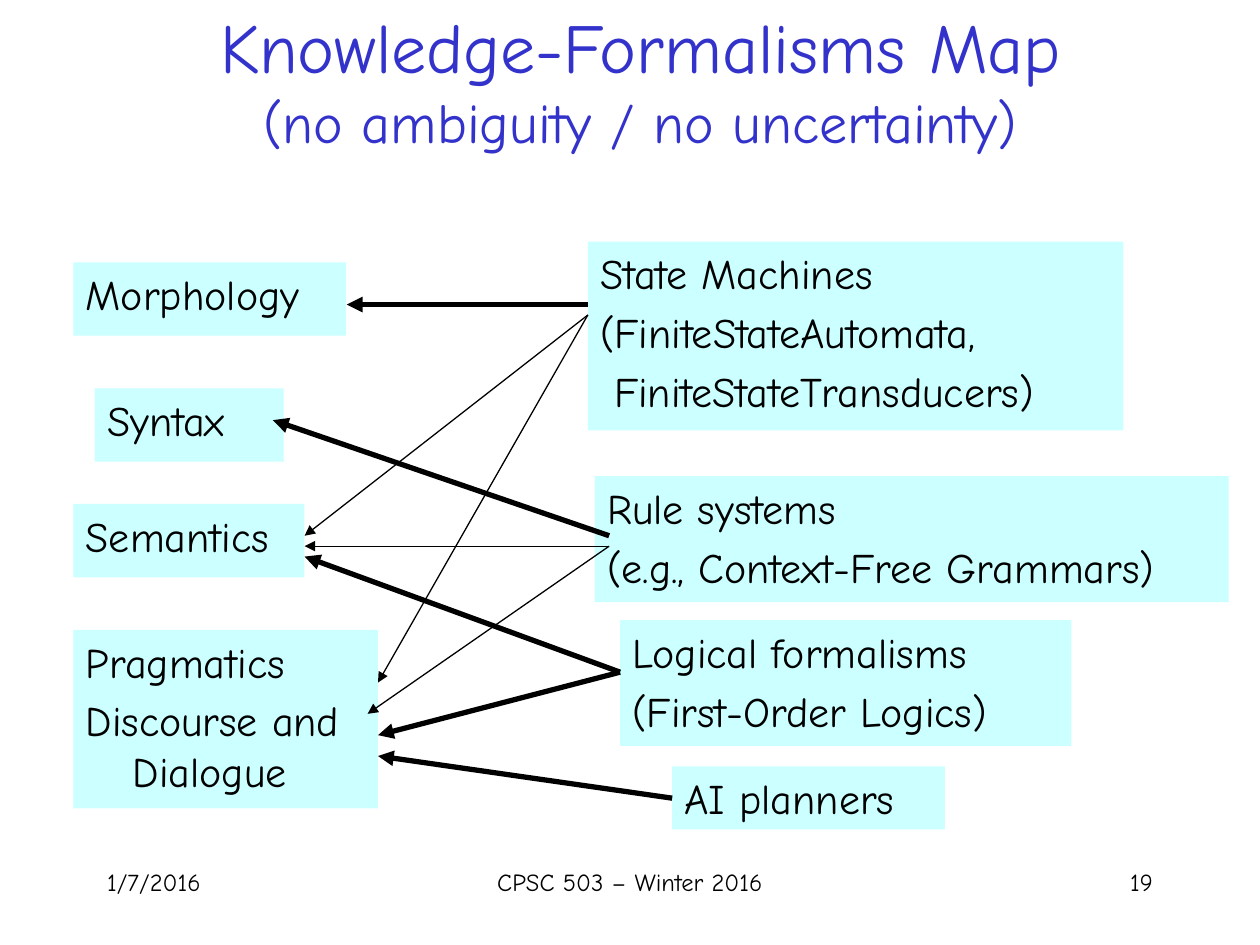
from lxml import etree
from pptx import Presentation
from pptx.dml.color import RGBColor
from pptx.enum.shapes import MSO_CONNECTOR, MSO_SHAPE
from pptx.enum.text import MSO_ANCHOR, PP_ALIGN
from pptx.oxml.ns import qn
from pptx.util import Cm, Pt

LEFT, CENTER, RIGHT = PP_ALIGN.LEFT, PP_ALIGN.CENTER, PP_ALIGN.RIGHT
TOP, MIDDLE = MSO_ANCHOR.TOP, MSO_ANCHOR.MIDDLE
RECTANGLE, STRAIGHT = MSO_SHAPE.RECTANGLE, MSO_CONNECTOR.STRAIGHT

BLACK, BLUE, CYAN = "000000", "3333CC", "CCFFFF"
THICK, THIN = 3, 0.75


def color(value):
    return RGBColor.from_string(value)


class MapPage:
    font = "Comic Neue"
    hanging = Cm(0.95)

    def __init__(self, page):
        self.page = page

    def span(self, para, text, size, ink=BLACK):
        run = para.add_run()
        run.text = text
        run.font.name = self.font
        run.font.size = Pt(size)
        run.font.color.rgb = color(ink)

    def text_box(self, area, align, anchor=TOP):
        """Add an empty wrapping text box and return its first paragraph."""
        frame = self.page.shapes.add_textbox(*map(Cm, area)).text_frame
        frame.word_wrap = True
        frame.vertical_anchor = anchor
        para = frame.paragraphs[0]
        para.alignment = align
        return para

    def title(self, area, heading, subtitle):
        para = self.text_box(area, CENTER, MIDDLE)
        self.span(para, heading, 40, BLUE)
        para.add_line_break()
        self.span(para, subtitle, 32, BLUE)

    def footer(self, left, width, text, align):
        para = self.text_box((left, 17.36, width, 1.27), align)
        self.span(para, text, 14)

    def topic(self, area, lines):
        box = self.page.shapes.add_shape(RECTANGLE, *map(Cm, area))
        box.shadow.inherit = False
        box.fill.solid()
        box.fill.fore_color.rgb = color(CYAN)
        box.line.fill.background()
        frame = box.text_frame
        frame.word_wrap = True
        frame.vertical_anchor = TOP
        for index, line in enumerate(lines):
            para = frame.add_paragraph() if index else frame.paragraphs[0]
            para.alignment = LEFT
            para.space_before = Pt(4.8)
            properties = para._p.get_or_add_pPr()
            properties.set("marL", str(self.hanging))
            properties.set("indent", str(-self.hanging))
            self.span(para, line, 24)

    def arrow(self, start, end, width):
        link = self.page.shapes.add_connector(STRAIGHT, *map(Cm, start + end))
        link.line.color.rgb = color(BLACK)
        link.line.width = Pt(width)
        etree.SubElement(link.line._get_or_add_ln(), qn("a:tailEnd"), type="triangle")
        etree.SubElement(link._element.spPr, qn("a:effectLst"))


TOPICS = [
    ((1.48, 5.29, 5.5, 1.48), ["Morphology"]),
    ((1.91, 7.83, 3.81, 1.48), ["Syntax"]),
    ((1.48, 10.16, 4.66, 1.48), ["Semantics"]),
    ((1.48, 12.7, 6.14, 3.6), ["Pragmatics", "Discourse and Dialogue"]),
    ((11.85, 4.87, 10.8, 3.81),
     ["State Machines", "(FiniteStateAutomata,", " FiniteStateTransducers)"]),
    ((11.99, 9.6, 12.78, 2.54), ["Rule systems", "(e.g., Context-Free Grammars)"]),
    ((12.5, 12.5, 9.1, 2.54), ["Logical formalisms", "(First-Order Logics)"]),
    ((13.55, 15.45, 5.5, 1.27), ["AI planners"]),
]

# Each formalism's starting point, its line width and the points it leads to
ARROWS = [
    ((11.85, 6.14), THICK, [(6.99, 6.14)]),
    ((12.28, 10.8), THICK, [(5.5, 8.47)]),
    ((12.5, 13.55), THICK, [(6.14, 11.22), (7.62, 14.82)]),
    ((11.85, 6.35), THIN, [(6.14, 10.8), (7.62, 13.76)]),
    ((12.28, 11.01), THIN, [(6.14, 11.01), (7.41, 14.39)]),
    ((13.55, 16.09), THICK, [(7.62, 15.24)]),
]


def main():
    deck = Presentation()
    deck.slide_width, deck.slide_height = Cm(25.4), Cm(19.05)
    page = MapPage(deck.slides.add_slide(deck.slide_layouts[6]))

    page.title((2.54, 0, 20.75, 3.18),
               "Knowledge-Formalisms Map", "(no ambiguity / no uncertainty)")
    for area, lines in TOPICS:
        page.topic(area, lines)
    for start, width, ends in ARROWS:
        for end in ends:
            page.arrow(start, end, width)
    page.footer(1.91, 5.29, "1/7/2016", LEFT)
    page.footer(8.68, 8.04, "CPSC 503 – Winter 2016", CENTER)
    page.footer(18.2, 5.29, "19", RIGHT)

    deck.save("out.pptx")


if __name__ == "__main__":
    main()
